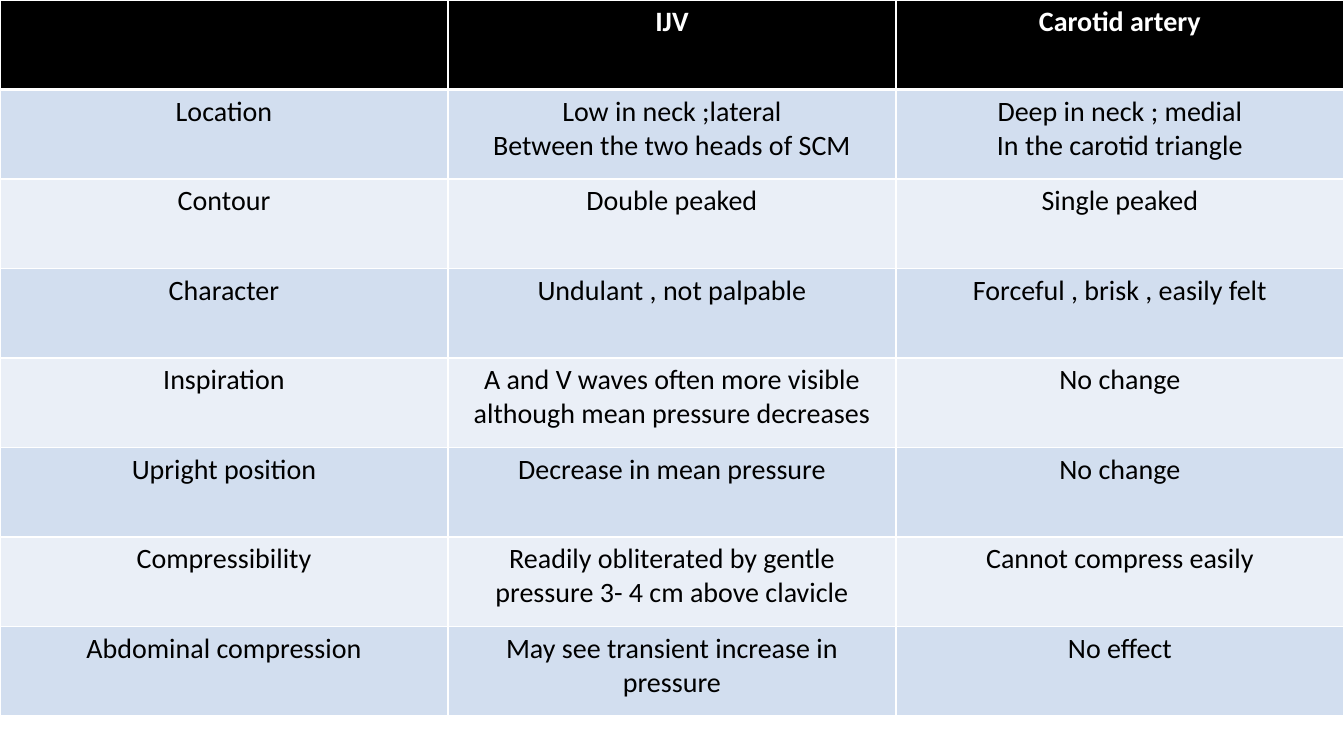
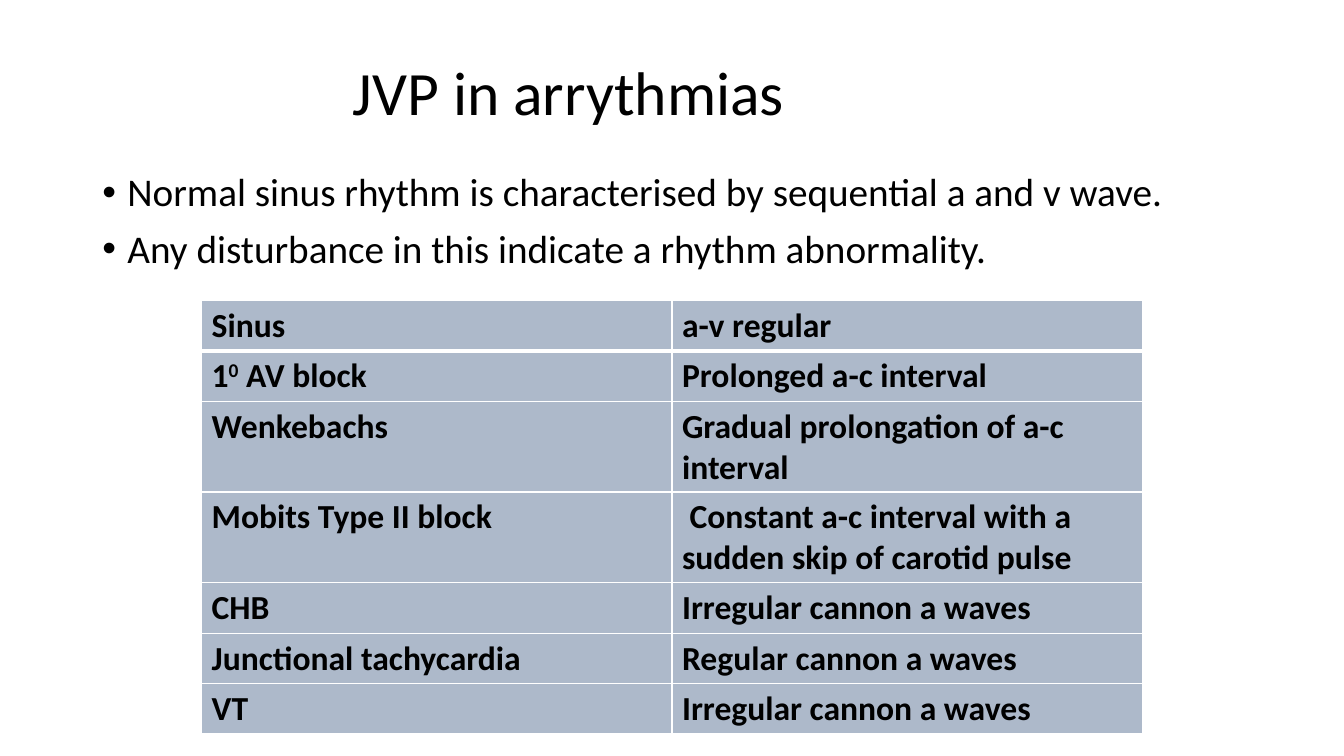
from dataclasses import dataclass

from lxml.etree import SubElement
from pptx import Presentation
from pptx.dml.color import RGBColor
from pptx.enum.text import MSO_ANCHOR, PP_ALIGN
from pptx.oxml.ns import qn
from pptx.util import Emu, Pt


@dataclass(frozen=True)
class Theme:
    font: str = "Calibri"
    ink: str = "000000"
    paper: str = "FFFFFF"
    bands: tuple = ("D2DEEF", "EAEFF7")
    slate: str = "ADB9CA"
    slate_opacity: int = 88
    title_size: int = 44
    bullet_size: int = 28
    small_cell_size: int = 20
    large_cell_size: int = 24
    rule: int = 1
    header_rule: int = 3


THEME = Theme()
SLIDE_W, SLIDE_H = 1280, 720
TITLE_ONLY, BLANK = 5, 6

# Content: a line break starts a new paragraph, ^marks^ enclose a superscript
PULSE_ROWS = [
    ("", "IJV", "Carotid artery"),
    ("Location", "Low in neck ;lateral\nBetween the two heads of SCM",
     "Deep in neck ; medial\nIn the carotid triangle"),
    ("Contour", "Double peaked", "Single peaked"),
    ("Character", "Undulant , not palpable", "Forceful , brisk , easily felt"),
    ("Inspiration",
     "A and V waves often more visible although mean pressure decreases",
     "No change"),
    ("Upright position", "Decrease in mean pressure", "No change"),
    ("Compressibility",
     "Readily obliterated by gentle pressure 3- 4 cm above clavicle",
     "Cannot compress easily"),
    ("Abdominal compression", "May see transient increase in pressure",
     "No effect"),
]

ARRHYTHMIA_TITLE = "JVP in arrythmias"
ARRHYTHMIA_BULLETS = [
    "Normal sinus rhythm is characterised by sequential a and v wave.",
    "Any disturbance in this indicate a rhythm abnormality.",
]
ARRHYTHMIA_ROWS = [
    ("Sinus", "a-v regular"),
    ("1^0^ AV block", "Prolonged a-c interval"),
    ("Wenkebachs", "Gradual prolongation of a-c interval"),
    ("Mobits Type II block",
     " Constant a-c interval with a sudden skip of carotid pulse"),
    ("CHB", "Irregular cannon a waves"),
    ("Junctional tachycardia", "Regular cannon a waves"),
    ("VT", "Irregular cannon a waves"),
]


def px(n):
    return Emu(n * 9525)


def style_run(r, size, color=THEME.ink, bold=False):
    r.font.name = THEME.font
    r.font.size = Pt(size)
    r.font.bold = bold
    r.font.color.rgb = RGBColor.from_string(color)


def add_border(cell, side, width):
    ln = SubElement(cell._tc.get_or_add_tcPr(), qn(f"a:ln{side}"),
                    w=str(Pt(width)))
    fill = SubElement(ln, qn("a:solidFill"))
    SubElement(fill, qn("a:srgbClr"), val=THEME.paper)


def fill_cell(cell, color, opacity=100):
    cell.fill.solid()
    cell.fill.fore_color.rgb = RGBColor.from_string(color)
    if opacity < 100:
        clr = cell._tc.tcPr.find(".//" + qn("a:srgbClr"))
        SubElement(clr, qn("a:alpha"), val=str(opacity * 1000))


def write_cell(cell, text, align, size, color, bold):
    tf = cell.text_frame
    for i, line in enumerate(text.split("\n")):
        p = tf.add_paragraph() if i else tf.paragraphs[0]
        p.alignment = align
        for j, part in enumerate(line.split("^")):
            if not part:
                continue
            r = p.add_run()
            r.text = part
            style_run(r, size, color, bold)
            if j % 2:
                r._r.get_or_add_rPr().set("baseline", "30000")


def add_grid(s, rows, box, look, align, size):
    """Add a table; look(row) gives fill, opacity, text colour and bold."""
    table = s.shapes.add_table(len(rows), len(rows[0]),
                               *(px(n) for n in box)).table
    table.horz_banding = False
    for i, row in enumerate(rows):
        fill, opacity, color, bold = look(i)
        rules = {"L": THEME.rule, "R": THEME.rule,
                 "T": THEME.header_rule if i == 1 else THEME.rule,
                 "B": THEME.header_rule if i == 0 else THEME.rule}
        for j, text in enumerate(row):
            cell = table.cell(i, j)
            for side, width in rules.items():
                add_border(cell, side, width)
            fill_cell(cell, fill, opacity)
            write_cell(cell, text, align, size, color, bold)


def set_title(s, text, box, indent):
    sp = s.shapes.title
    sp.left, sp.top, sp.width, sp.height = (px(n) for n in box)
    tf = sp.text_frame
    tf.text = text
    tf.vertical_anchor = MSO_ANCHOR.MIDDLE
    tf.margin_left = px(indent)
    p = tf.paragraphs[0]
    p.alignment = PP_ALIGN.LEFT
    p.line_spacing = 0.9
    style_run(p.runs[0], THEME.title_size)


def add_bullets(s, lines, box, indent):
    tf = s.shapes.add_textbox(*(px(n) for n in box)).text_frame
    tf.word_wrap = True
    tf.text = "\n".join(lines)
    for p in tf.paragraphs:
        p.line_spacing = 0.9
        p.space_before = Pt(10)
        style_run(p.runs[0], THEME.bullet_size)
        pPr = p._p.get_or_add_pPr()
        pPr.set("marL", str(px(indent)))
        pPr.set("indent", str(-px(indent)))
        SubElement(pPr, qn("a:buFont"), typeface="Arial")
        SubElement(pPr, qn("a:buChar"), char="•")


def pulse_look(row):
    if row == 0:
        return THEME.ink, 100, THEME.paper, True
    return THEME.bands[(row - 1) % 2], 100, THEME.ink, False


def arrhythmia_look(row):
    return THEME.slate, THEME.slate_opacity, THEME.ink, True


def main():
    prs = Presentation()
    prs.slide_width, prs.slide_height = px(SLIDE_W), px(SLIDE_H)

    # Venous and carotid pulse compared
    s = prs.slides.add_slide(prs.slide_layouts[BLANK])
    add_grid(s, PULSE_ROWS, (0, 0, SLIDE_W, 682), pulse_look,
             PP_ALIGN.CENTER, THEME.small_cell_size)

    # Venous pulse in arrhythmias
    s = prs.slides.add_slide(prs.slide_layouts[TITLE_ONLY])
    set_title(s, ARRHYTHMIA_TITLE, (88, 21, 1104, 139), indent=248)
    add_bullets(s, ARRHYTHMIA_BULLETS, (88, 160, 1104, 457), indent=24)
    add_grid(s, ARRHYTHMIA_ROWS, (192, 286, 896, 280), arrhythmia_look,
             PP_ALIGN.LEFT, THEME.large_cell_size)

    prs.save("out.pptx")


if __name__ == "__main__":
    main()
